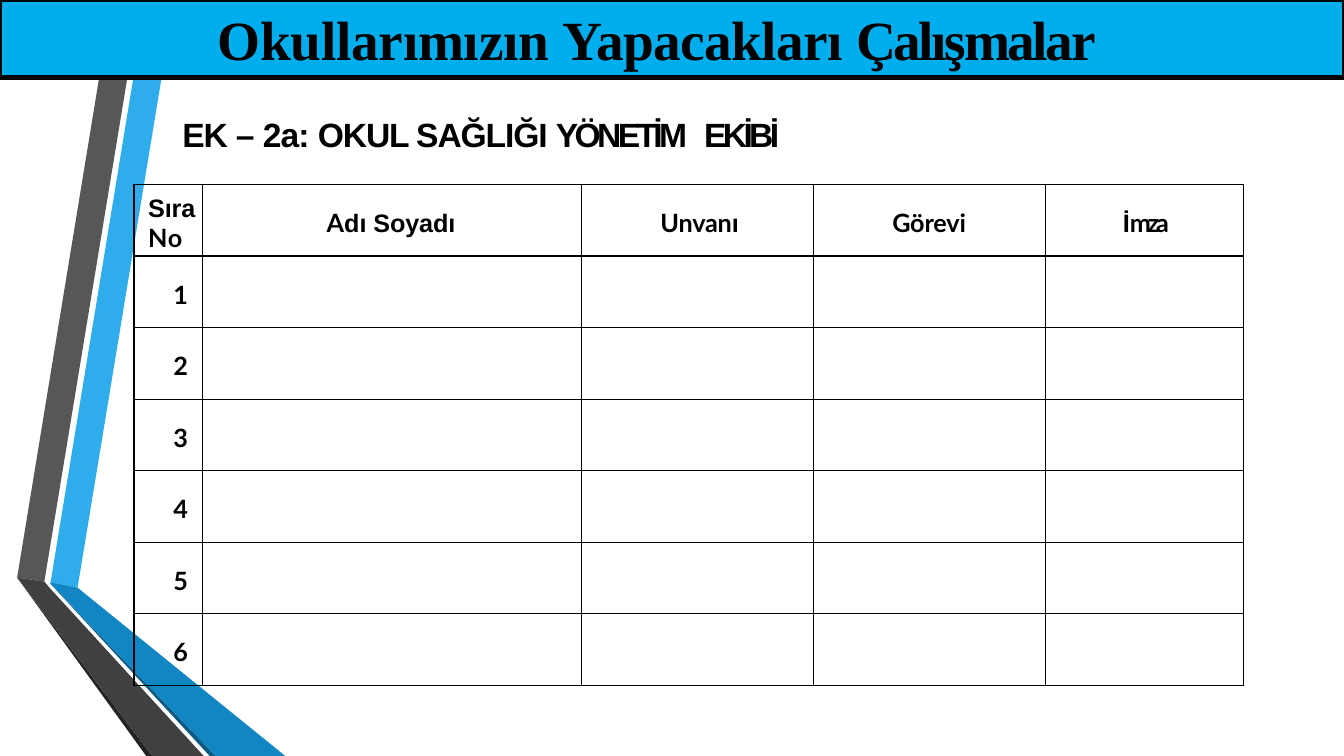
from lxml import etree
from pptx import Presentation
from pptx.dml.color import RGBColor
from pptx.enum.shapes import MSO_SHAPE
from pptx.enum.text import MSO_ANCHOR, PP_ALIGN
from pptx.oxml.ns import qn
from pptx.util import Pt

PX = 9144
RECT = MSO_SHAPE.RECTANGLE
TOP, MIDDLE = MSO_ANCHOR.TOP, MSO_ANCHOR.MIDDLE
LEFT, CENTER = PP_ALIGN.LEFT, PP_ALIGN.CENTER
BLACK = "000000"

RIBBONS = [
    ("2EACEB", [(173, 0), (145, 0), (50, 579), (77, 583)]),
    ("575757", [(139, 0), (111, 0), (17, 573), (44, 577)]),
    ("242424", [(17, 573), (145, 750), (151, 750)]),
    ("0C5A82", [(50, 579), (208, 750), (214, 750)]),
    ("1285C3", [(50, 578), (50, 579), (214, 750), (283, 750), (77, 583)]),
    ("404040", [(17, 573), (151, 750), (202, 750), (49, 583), (44, 577)]),
]
TITLE = [[("Okullarımızın ", "Times New Roman", -0.2),
          ("Yapacakları ", "Times New Roman", -0.4),
          ("Çalışmalar", "Times New Roman", -1.7)]]
SUB = [[("EK ", "Arial", -0.9), ("– ", "Arial", -0.8), ("2a: ", "Arial", -0.7),
        ("OKUL SAĞLIĞI ", "Arial", -0.8), ("YÖNETİM", "Arial", -2.6),
        (" ", "Arial", 5.5), ("EKİBİ", "Arial", -2.6)]]
HEADS = [
    (14, 9, LEFT, [[("Sıra", "Arial", -0.1)], [("No", "Lato", 0.5)]]),
    (123, 23, LEFT, [[("A", "Lato", 0), ("dı", "Arial", 0), (" Soyadı", "Arial", -0.1)]]),
    (78, 23, LEFT, [[("Unvan", "Lato", -0.1), ("ı", "Arial", -0.1)]]),
    (78, 23, LEFT, [[("Görevi", "Lato", -0.1)]]),
    (3, 23, CENTER, [[("İ", "Arial", -2.3), ("mza", "Lato", -2.3)]]),
]
COLS = [68, 376, 230, 230, 196]
COUNT, ROW = 6, 71


def color(code):
    return RGBColor.from_string(code)


def apply(target, values):
    for name, value in values.items():
        setattr(target, name, value)


def write(frame, lines, size, align=LEFT, pitch=1.0):
    for i, line in enumerate(lines):
        para = frame.add_paragraph() if i else frame.paragraphs[0]
        apply(para, {"alignment": align, "line_spacing": pitch, "space_before": Pt(0)})
        for text, face, gap in line:
            run = para.add_run()
            run.text = text
            apply(run.font, {"name": face, "size": Pt(size), "bold": True})
            run.font.color.rgb = color(BLACK)
            run.font._element.set("spc", str(round(gap * 100)))


def inset(box, left, top):
    apply(box, {"margin_left": left * PX, "margin_top": top * PX,
                "margin_right": 0, "margin_bottom": 0})


def ribbon(slide, fill, points):
    path = slide.shapes.build_freeform(*points[0], scale=PX)
    path.add_line_segments(points[1:], close=True)
    shape = path.convert_to_shape()
    shape.shadow.inherit = False
    shape.fill.solid()
    shape.fill.fore_color.rgb = color(fill)
    shape.line.fill.background()


def banner(slide):
    bar = slide.shapes.add_shape(RECT, 0, 0, 1333 * PX, 77 * PX)
    bar.shadow.inherit = False
    bar.fill.solid()
    bar.fill.fore_color.rgb = color("00AEEE")
    bar.line.color.rgb = color(BLACK)
    bar.line.width = Pt(3)


def heading(slide):
    title = slide.shapes.title
    title.element.getparent().append(title.element)
    apply(title, {"left": 215 * PX, "top": 3 * PX, "width": 902 * PX, "height": 69 * PX})
    apply(title.text_frame, {"word_wrap": True, "vertical_anchor": MIDDLE})
    inset(title.text_frame, 1, 2)
    write(title.text_frame, TITLE, 39.5)


def caption(slide):
    box = slide.shapes.add_textbox(180 * PX, 109 * PX, 609 * PX, 84 * PX)
    apply(box.text_frame, {"word_wrap": True, "vertical_anchor": TOP})
    inset(box.text_frame, 1, 4)
    write(box.text_frame, SUB, 24)


def border(cell):
    props = cell._tc.get_or_add_tcPr()
    for side in ("lnL", "lnR", "lnT", "lnB"):
        line = etree.SubElement(props, qn("a:" + side), w=str(Pt(1)))
        fill = etree.SubElement(line, qn("a:solidFill"))
        etree.SubElement(fill, qn("a:srgbClr"), val=BLACK)


def roster(slide):
    rows = COUNT + 1
    frame = slide.shapes.add_table(rows, len(COLS), 133 * PX, 183 * PX,
                                   sum(COLS) * PX, rows * ROW * PX)
    table = frame.table
    apply(table, {"first_row": False, "horz_banding": False})
    for col, width in zip(table.columns, COLS):
        col.width = width * PX
    for row in table.rows:
        row.height = ROW * PX
    for cell in table.iter_cells():
        border(cell)
        cell.fill.background()
    for i, (left, top, align, lines) in enumerate(HEADS):
        cell = table.cell(0, i)
        inset(cell, left, top)
        write(cell.text_frame, lines, 18, align, Pt(21.3) if len(lines) > 1 else 1.0)
    for i in range(1, rows):
        cell = table.cell(i, 0)
        inset(cell, 39, 23)
        write(cell.text_frame, [[(str(i), "Lato", 0)]], 18)


def main():
    deck = Presentation()
    apply(deck, {"slide_width": 1333 * PX, "slide_height": 750 * PX})
    slide = deck.slides.add_slide(deck.slide_layouts[5])
    for fill, points in RIBBONS:
        ribbon(slide, fill, points)
    banner(slide)
    heading(slide)
    caption(slide)
    roster(slide)
    deck.save("out.pptx")


if __name__ == "__main__":
    main()
